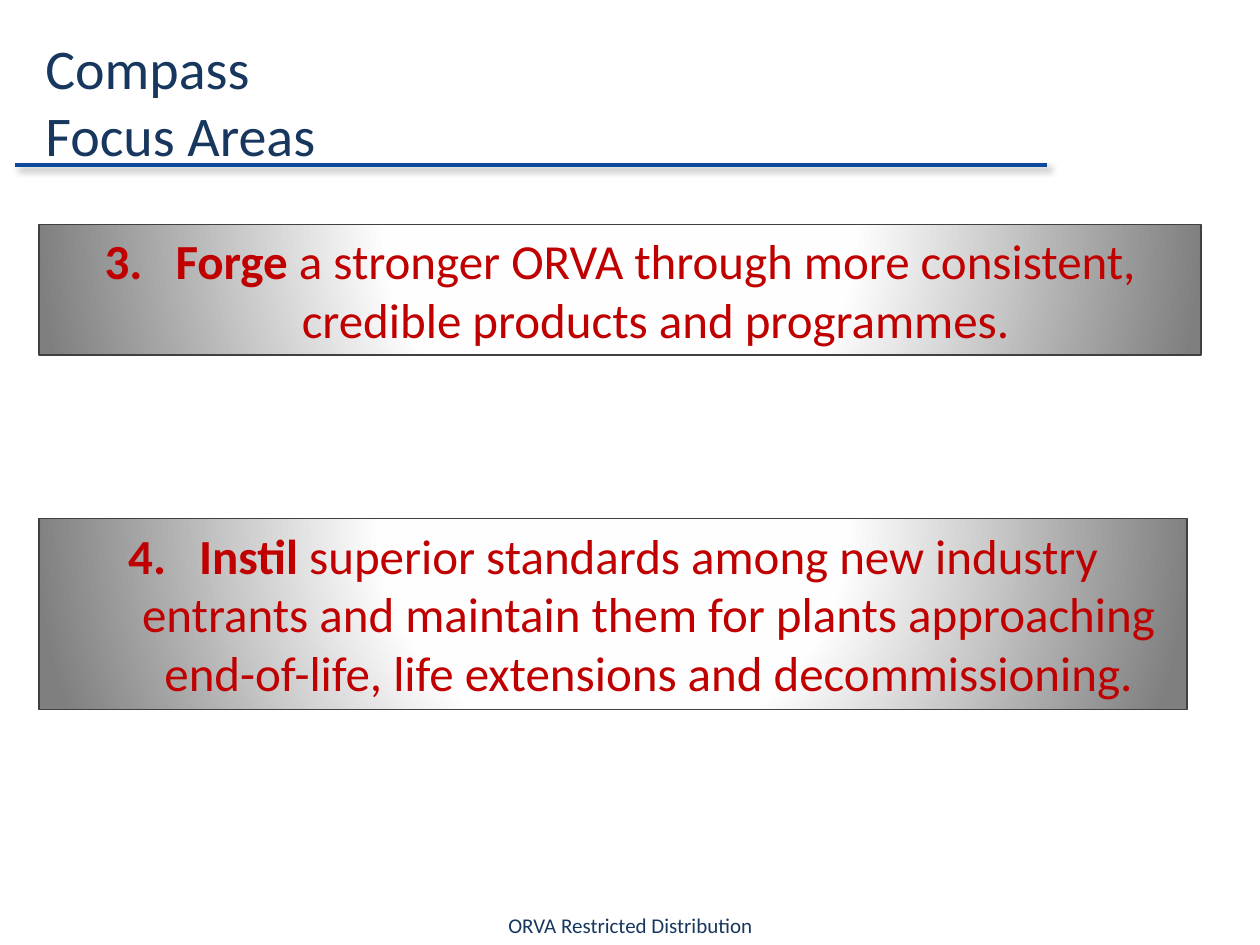
import pptx
import pptx.dml.color
import pptx.enum.shapes
import pptx.enum.text
import pptx.oxml
import pptx.oxml.ns
import pptx.util

Cm = pptx.util.Cm
Pt = pptx.util.Pt
Align = pptx.enum.text.PP_ALIGN
Anchor = pptx.enum.text.MSO_ANCHOR
AutoSize = pptx.enum.text.MSO_AUTO_SIZE
NAMESPACE = pptx.oxml.ns.nsdecls("a")


def color(value):
    return pptx.dml.color.RGBColor.from_string(value)


def add_run(paragraph, text, size, value, bold=False):
    run = paragraph.add_run()
    run.text = text
    run.font.name = "Calibri"
    run.font.size = Pt(size)
    run.font.bold = bold
    run.font.color.rgb = color(value)


presentation = pptx.Presentation()
presentation.slide_width = Cm(25.4)
presentation.slide_height = Cm(19.05)
slide = presentation.slides.add_slide(presentation.slide_layouts[5])

rule = slide.shapes.add_connector(
    pptx.enum.shapes.MSO_CONNECTOR.STRAIGHT, Cm(0.3), Cm(3.33), Cm(21.11), Cm(3.33))
rule.line.color.rgb = color("0D499C")
rule.line.width = Pt(2)
rule._element.spPr.append(pptx.oxml.parse_xml(
    f'<a:effectLst {NAMESPACE}><a:outerShdw blurRad="{Pt(4)}" dist="{Pt(3)}" dir="2700000" '
    'algn="tl" rotWithShape="0"><a:srgbClr val="000000"><a:alpha val="40000"/></a:srgbClr>'
    '</a:outerShdw></a:effectLst>'))

title = slide.shapes.title
title.left, title.top, title.width, title.height = Cm(0.66), Cm(0.69), Cm(20.29), Cm(2.67)
title.text_frame.auto_size = AutoSize.NONE
title.text_frame.vertical_anchor = Anchor.MIDDLE
paragraph = title.text_frame.paragraphs[0]
paragraph.alignment = Align.LEFT
add_run(paragraph, "Compass", 32, "17375E")
paragraph.add_line_break()
add_run(paragraph, "Focus Areas", 32, "17375E")

focus_areas = [
    (3, 4.52, 23.42, 2.64, "Forge",
     " a stronger ORVA through more consistent, credible products and programmes."),
    (4, 10.46, 23.14, 3.84, "Instil",
     " superior standards among new industry entrants and maintain them for plants "
     "approaching end-of-life, life extensions and decommissioning."),
]
gradient_stops = "".join(
    f'<a:gs pos="{position * 1000}"><a:srgbClr val="{value}"/></a:gs>'
    for position, value in [(0, "FFFFFF"), (40, "FEFEFE"), (100, "7F7F7F")])

for number, top, width, height, verb, statement in focus_areas:
    banner = slide.shapes.add_shape(
        pptx.enum.shapes.MSO_SHAPE.RECTANGLE, Cm(0.79), Cm(top), Cm(width), Cm(height))
    banner.shadow.inherit = False
    banner.line.color.rgb = color("404040")
    banner.line.width = Pt(0.75)
    banner.fill.gradient()
    properties = banner._element.spPr
    properties.replace(
        properties.find(pptx.oxml.ns.qn("a:gradFill")),
        pptx.oxml.parse_xml(
            f'<a:gradFill {NAMESPACE} rotWithShape="1"><a:gsLst>{gradient_stops}</a:gsLst>'
            '<a:path path="circle"><a:fillToRect l="50000" t="-80000" r="50000" b="180000"/>'
            '</a:path></a:gradFill>'))
    frame = banner.text_frame
    frame.word_wrap = True
    frame.auto_size = AutoSize.SHAPE_TO_FIT_TEXT
    frame.vertical_anchor = Anchor.TOP
    paragraph = frame.paragraphs[0]
    paragraph.alignment = Align.CENTER
    paragraph_properties = paragraph._p.get_or_add_pPr()
    paragraph_properties.set("marL", str(Cm(1.43)))
    paragraph_properties.set("indent", str(-Cm(1.43)))
    paragraph_properties.append(pptx.oxml.parse_xml(
        f'<a:buFont {NAMESPACE} typeface="+mj-lt"/>'))
    paragraph_properties.append(pptx.oxml.parse_xml(
        f'<a:buAutoNum {NAMESPACE} type="arabicPeriod" startAt="{number}"/>'))
    add_run(paragraph, verb, 28, "C00000", True)
    add_run(paragraph, statement, 28, "C00000")

footer = slide.shapes.add_textbox(Cm(2.92), Cm(18.26), Cm(19.58), Cm(0.79))
footer.text_frame.word_wrap = True
footer.text_frame.vertical_anchor = Anchor.MIDDLE
paragraph = footer.text_frame.paragraphs[0]
paragraph.alignment = Align.CENTER
add_run(paragraph, "ORVA Restricted Distribution", 12, "17375E")

presentation.save("out.pptx")
